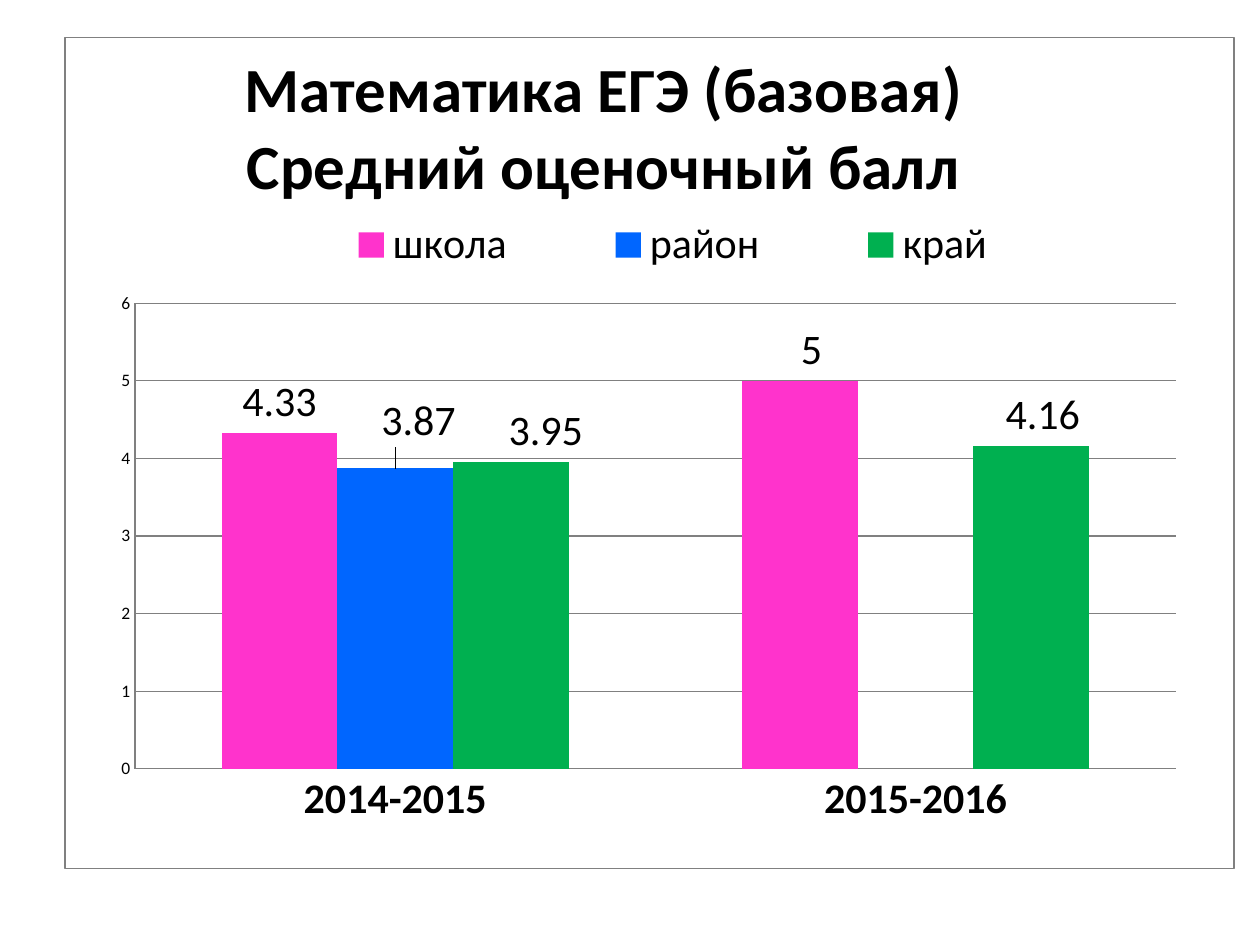
from pptx import Presentation
from pptx.chart.data import CategoryChartData
from pptx.dml.color import RGBColor
from pptx.enum.chart import XL_CHART_TYPE, XL_LABEL_POSITION, XL_LEGEND_POSITION, XL_TICK_MARK
from pptx.oxml import parse_xml
from pptx.oxml.ns import nsdecls, qn
from pptx.util import Inches, Pt

COLUMN_CLUSTERED = XL_CHART_TYPE.COLUMN_CLUSTERED
OUTSIDE_END = XL_LABEL_POSITION.OUTSIDE_END
LEGEND_RIGHT = XL_LEGEND_POSITION.RIGHT
NO_TICK = XL_TICK_MARK.NONE

FONT = "Calibri"
BLACK = "000000"
GRAY = "808080"
YEARS = ["2014-2015", "2015-2016"]
TITLE_LINES = ["Математика ЕГЭ (базовая)", "Средний оценочный балл"]
# name, scores, colour, shift of each label as a share of the chart
SERIES = [
    ("школа", [4.33, 5], "FF33CC", [(0, 0), (0.01, 0)]),
    ("район", [3.87, None], "0066FF", [(0.02, -0.02), None]),
    ("край", [3.95, 4.16], "00B050", [(0.03, 0), (0.01, 0)]),
]


def color(value):
    return RGBColor.from_string(value)


def set_font(font, size, bold=False):
    font.name = FONT
    font.size = Pt(size)
    font.bold = bold
    font.color.rgb = color(BLACK)


def set_line(line, value=GRAY):
    line.color.rgb = color(value)
    line.width = Pt(0.75)


def set_layout(parent, index, left, top, size=None, mode="edge", inner=False):
    """Place a chart part by shares of the chart's width and height."""
    old = parent.find(qn("c:layout"))
    if old is not None:
        parent.remove(old)
    values = [("layoutTarget", "inner")] if inner else []
    if mode == "edge":
        values += [("xMode", "edge"), ("yMode", "edge")]
    values += [("x", left), ("y", top)]
    if size:
        values += [("w", size[0]), ("h", size[1])]
    items = "".join(f'<c:{tag} val="{value}"/>' for tag, value in values)
    parent.insert(index, parse_xml(
        f'<c:layout {nsdecls("c")}><c:manualLayout>{items}</c:manualLayout></c:layout>'))


def add_border(chart_space):
    chart_space.find(qn("c:txPr")).addprevious(parse_xml(
        f'<c:spPr {nsdecls("c", "a")}><a:solidFill><a:srgbClr val="FFFFFF"/></a:solidFill>'
        f'<a:ln w="{Pt(0.75)}"><a:solidFill><a:srgbClr val="{GRAY}"/></a:solidFill></a:ln></c:spPr>'))


def format_title(chart):
    frame = chart.chart_title.text_frame
    for number, line in enumerate(TITLE_LINES):
        paragraph = frame.add_paragraph() if number else frame.paragraphs[0]
        run = paragraph.add_run()
        run.text = line
        set_font(run.font, 36, bold=True)


def format_axes(chart):
    for axis, size, bold in ((chart.category_axis, 24, True), (chart.value_axis, 10, False)):
        axis.major_tick_mark = axis.minor_tick_mark = NO_TICK
        set_font(axis.tick_labels.font, size, bold)
        set_line(axis.format.line)
    axis = chart.value_axis
    axis.minimum_scale, axis.maximum_scale, axis.major_unit = 0, 6, 1
    set_line(axis.major_gridlines.format.line)


def format_series(series, fill, shifts):
    series.format.fill.solid()
    series.format.fill.fore_color.rgb = color(fill)
    series.invert_if_negative = False
    labels = series.data_labels
    labels.show_value = True
    labels.position = OUTSIDE_END
    set_font(labels.font, 24)
    for index, shift in enumerate(shifts):
        if shift and any(shift):
            label = series.points[index].data_label
            set_font(label.font, 24)
            label.position = OUTSIDE_END
            element = labels._element.find(qn("c:dLbl") + f"[{index + 1}]")
            if element is None:
                element = labels._element.findall(qn("c:dLbl"))[-1]
            set_layout(element, 1, *shift, mode="factor")


def add_score_chart(slide, left, top, width, height):
    data = CategoryChartData()
    data.categories = YEARS
    for name, scores, _, _ in SERIES:
        data.add_series(name, scores)
    chart = slide.shapes.add_chart(COLUMN_CLUSTERED, left, top, width, height, data).chart
    set_font(chart.font, 10)
    add_border(chart._chartSpace)

    # Title, legend and axes
    format_title(chart)
    chart.has_legend = True
    chart.legend.position = LEGEND_RIGHT
    chart.legend.include_in_layout = False
    set_font(chart.legend.font, 24)
    format_axes(chart)

    # Columns
    plot = chart.plots[0]
    plot.gap_width, plot.overlap = 150, 0
    plot.vary_by_categories = False
    for series, (_, _, fill, shifts) in zip(plot.series, SERIES):
        format_series(series, fill, shifts)

    # Positions inside the chart
    set_layout(chart.chart_title._element, 1, 0.15, 0.01)
    set_layout(chart.legend._element, 1, 0.17, 0.21, (0.7, 0.08))
    set_layout(chart._chartSpace.chart.plotArea, 0, 0.06, 0.32, (0.89, 0.56), inner=True)


def main():
    presentation = Presentation()
    presentation.slide_width = Inches(10)
    presentation.slide_height = Inches(7.5)
    blank_layout = presentation.slide_layouts[6]
    slide = presentation.slides.add_slide(blank_layout)
    add_score_chart(slide, Inches(0.51), Inches(0.29), Inches(9.29), Inches(6.61))
    presentation.save("out.pptx")


if __name__ == "__main__":
    main()
